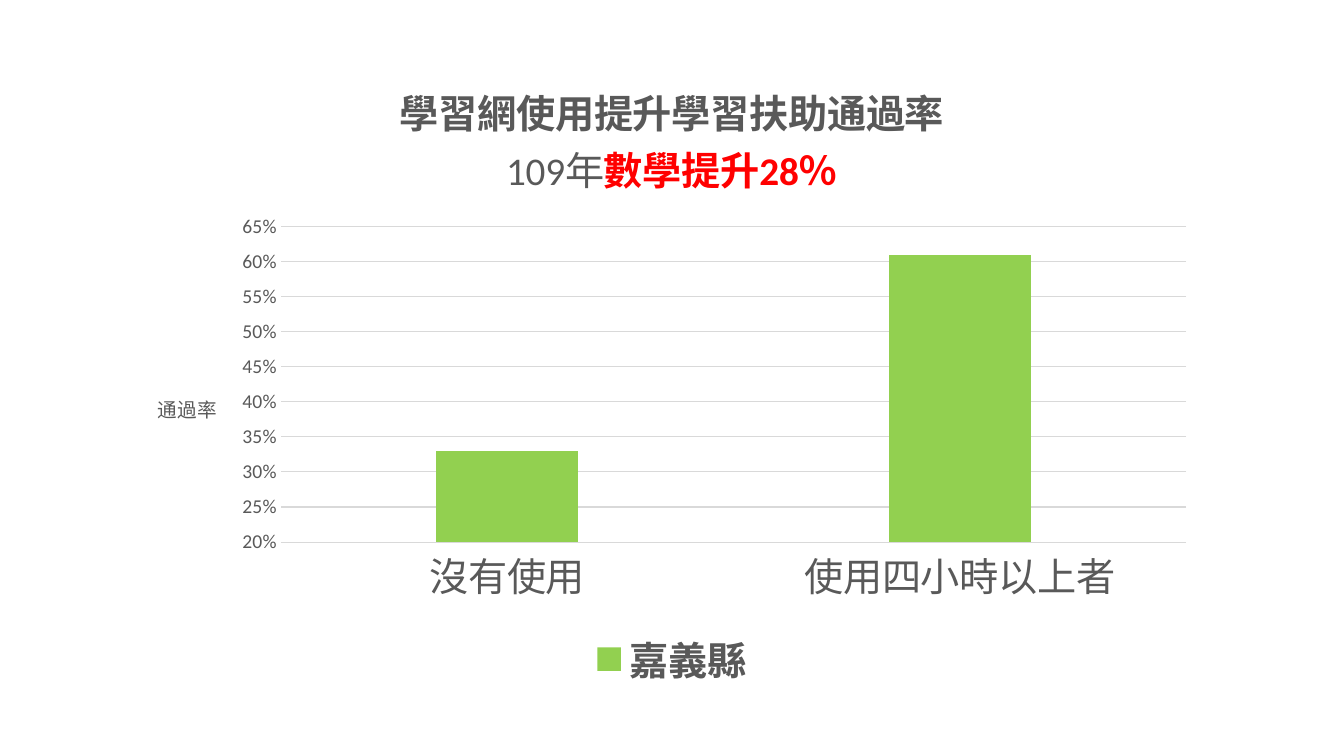
import pptx
import pptx.chart.data
import pptx.dml.color
import pptx.enum.chart
import pptx.oxml
import pptx.oxml.ns
import pptx.util

Cm = pptx.util.Cm
Pt = pptx.util.Pt
GRAY = pptx.dml.color.RGBColor(0x59, 0x59, 0x59)
PALE = pptx.dml.color.RGBColor(0xD9, 0xD9, 0xD9)
GREEN = pptx.dml.color.RGBColor(0x92, 0xD0, 0x50)
RED = pptx.dml.color.RGBColor(0xFF, 0x00, 0x00)
NS = pptx.oxml.ns.nsdecls("a")


def style(font, size, color=GRAY, bold=False):
    font.size = Pt(size)
    font.bold = bold
    font.color.rgb = color
    font.name = "Calibri"
    # East Asian typeface follows the Latin one
    font._rPr.find(pptx.oxml.ns.qn("a:latin")).addnext(
        pptx.oxml.parse_xml(f'<a:ea {NS} typeface="Noto Sans CJK SC"/>'))


deck = pptx.Presentation()
deck.slide_width = Cm(33.87)
deck.slide_height = Cm(19.05)
slide = deck.slides.add_slide(deck.slide_layouts[6])

# Column chart
data = pptx.chart.data.CategoryChartData(number_format="0%")
data.categories = ["沒有使用", "使用四小時以上者"]
data.add_series("嘉義縣", [0.33, 0.61])
chart = slide.shapes.add_chart(
    pptx.enum.chart.XL_CHART_TYPE.COLUMN_CLUSTERED,
    Cm(3.43), Cm(1.52), Cm(27), Cm(16), data).chart
style(chart.font, 10)
plot = chart.plots[0]
plot.gap_width = 219
plot.overlap = -27
plot.vary_by_categories = False
fill = plot.series[0].format.fill
fill.solid()
fill.fore_color.rgb = GREEN

# Title in two lines
lines = [
    [("學習網使用提升學習扶助通過率", GRAY, True)],
    [("109年", GRAY, False), ("數學提升28％", RED, True)],
]
frame = chart.chart_title.text_frame
for n, line in enumerate(lines):
    para = frame.add_paragraph() if n else frame.paragraphs[0]
    for text, color, bold in line:
        run = para.add_run()
        run.text = text
        style(run.font, 28, color, bold)
chart.chart_title.include_in_layout = False

# Category axis
none = pptx.enum.chart.XL_TICK_MARK.NONE
cat = chart.category_axis
cat.major_tick_mark = none
style(cat.tick_labels.font, 28)
cat.format.line.color.rgb = PALE
cat.format.line.width = Pt(0.75)

# Value axis with a level title
val = chart.value_axis
val.minimum_scale = 0.2
val.maximum_scale = 0.65
val.major_unit = 0.05
val.major_tick_mark = none
val.tick_labels.number_format = "0%"
val.tick_labels.number_format_is_linked = False
style(val.tick_labels.font, 14)
val.format.line.fill.background()
val.major_gridlines.format.line.color.rgb = PALE
val.major_gridlines.format.line.width = Pt(0.75)
frame = val.axis_title.text_frame
frame.text = "通過率"
style(frame.paragraphs[0].runs[0].font, 14)
body = frame._txBody.bodyPr
body.set("rot", "0")
body.set("vert", "horz")

# Legend
chart.has_legend = True
chart.legend.position = pptx.enum.chart.XL_LEGEND_POSITION.BOTTOM
chart.legend.include_in_layout = False
style(chart.legend.font, 28, bold=True)

deck.save("out.pptx")
